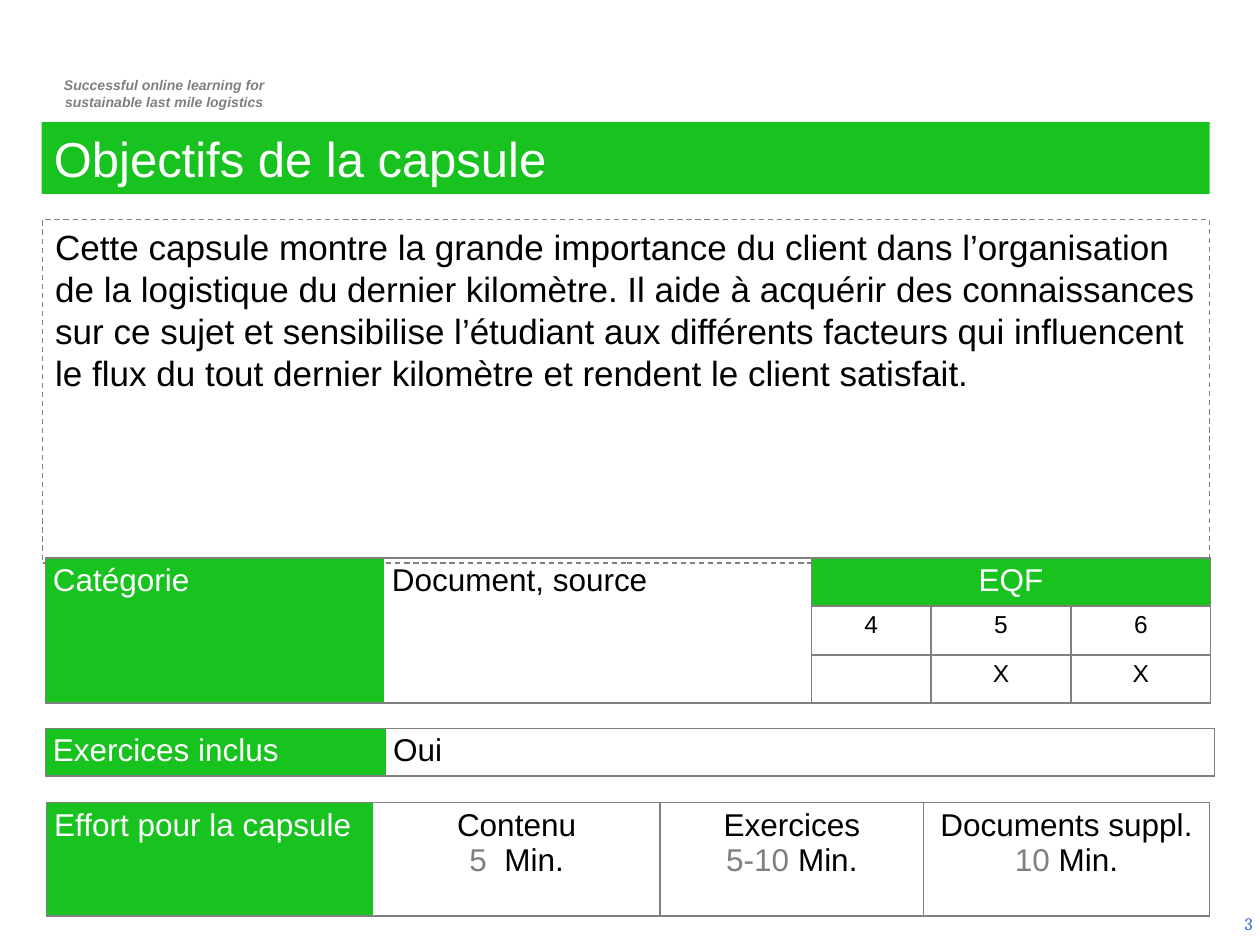
from lxml.etree import SubElement
from pptx import Presentation
from pptx.dml.color import RGBColor
from pptx.enum.dml import MSO_LINE
from pptx.enum.shapes import MSO_SHAPE
from pptx.enum.text import MSO_ANCHOR, PP_ALIGN
from pptx.oxml.ns import qn
from pptx.util import Inches, Pt

GREEN, GREY, BLACK, WHITE, BLUE = "18C320", "808080", "000000", "FFFFFF", "3366CC"
TAGLINE_GREY = "7F7F7F"
LEFT, CENTER, RIGHT = PP_ALIGN.LEFT, PP_ALIGN.CENTER, PP_ALIGN.RIGHT

TAGLINE = ["Successful online learning for", "sustainable last mile logistics"]
TITLE = "Objectifs de la capsule"
SUMMARY = (
    "Cette capsule montre la grande importance du client dans l’organisation "
    "de la logistique du dernier kilomètre. Il aide à acquérir des connaissances "
    "sur ce sujet et sensibilise l’étudiant aux différents facteurs qui influencent "
    "le flux du tout dernier kilomètre et rendent le client satisfait."
)
PAGE_NUMBER = "3"

# A cell is (lines, format); a line is a string or a list of (string, colour).
LABEL = dict(color=WHITE, fill=GREEN)
LEVEL = dict(size=14, align=CENTER)
CENTERED = dict(align=CENTER)


def duration(heading, minutes):
    return [heading, [(minutes, TAGLINE_GREY), (" Min.", BLACK)]], CENTERED


TABLES = [
    dict(
        left=0.36, top=4.43, widths=[2.69, 3.39, 0.95, 1.11, 1.11], heights=[0.37, 0.39, 0.37],
        merges=[(0, 0, 2, 0), (0, 1, 2, 1), (0, 2, 0, 4)],
        cells={
            (0, 0): (["Catégorie"], LABEL),
            (0, 1): (["Document, source"], {}),
            (0, 2): (["EQF"], LABEL | CENTERED),
            (1, 2): (["4"], LEVEL), (1, 3): (["5"], LEVEL), (1, 4): (["6"], LEVEL),
            (2, 3): (["X"], LEVEL), (2, 4): (["X"], LEVEL),
        },
    ),
    dict(
        left=0.36, top=5.78, widths=[2.7, 6.58], heights=[0.37], merges=[],
        cells={(0, 0): (["Exercices inclus"], LABEL), (0, 1): (["Oui"], {})},
    ),
    dict(
        left=0.37, top=6.37, widths=[2.59, 2.28, 2.09, 2.27], heights=[0.9], merges=[],
        cells={
            (0, 0): (["Effort pour la capsule"], LABEL),
            (0, 1): duration("Contenu", "5 "),
            (0, 2): duration("Exercices", "5-10"),
            (0, 3): duration("Documents suppl.", "10"),
        },
    ),
]


def rgb(color):
    return RGBColor.from_string(color)


def write(frame, lines, size=18, color=BLACK, font="Arial", align=LEFT, bold=False, italic=False):
    for index, line in enumerate(lines):
        para = frame.add_paragraph() if index else frame.paragraphs[0]
        para.alignment = align
        for text, tint in [(line, color)] if isinstance(line, str) else line:
            span = para.add_run()
            span.text = text
            span.font.name, span.font.size = font, Pt(size)
            span.font.bold, span.font.italic = bold, italic
            span.font.color.rgb = rgb(tint)


def add_text(page, at, lines, anchor=MSO_ANCHOR.TOP, **style):
    box = page.shapes.add_textbox(*map(Inches, at))
    box.text_frame.word_wrap = True
    box.text_frame.vertical_anchor = anchor
    write(box.text_frame, lines, **style)


def add_panel(page, at, text, fill=None, dashed=False, **style):
    panel = page.shapes.add_shape(MSO_SHAPE.RECTANGLE, *map(Inches, at))
    panel.shadow.inherit = False
    if fill:
        panel.fill.solid()
        panel.fill.fore_color.rgb = rgb(fill)
    else:
        panel.fill.background()
    if dashed:
        panel.line.color.rgb = rgb(GREY)
        panel.line.width = Pt(0.75)
        panel.line.dash_style = MSO_LINE.DASH
    else:
        panel.line.fill.background()
    panel.text_frame.word_wrap = True
    panel.text_frame.vertical_anchor = MSO_ANCHOR.TOP
    write(panel.text_frame, [text], **style)


def set_borders(cell, hidden):
    """Draw grey cell edges, except the hidden one."""
    properties = cell._tc.get_or_add_tcPr()
    for position, edge in enumerate(("lnL", "lnR", "lnT", "lnB")):
        line = SubElement(properties, qn(f"a:{edge}"), w=str(Pt(1)))
        if edge == hidden:
            SubElement(line, qn("a:noFill"))
        else:
            SubElement(SubElement(line, qn("a:solidFill")), qn("a:srgbClr"), val=GREY)
        properties.insert(position, line)


def add_grid(page, left, top, widths, heights, merges, cells):
    frame = page.shapes.add_table(
        len(heights), len(widths),
        *map(Inches, (left, top, sum(widths), sum(heights))),
    )
    table = frame.table
    table.first_row = table.horz_banding = False
    for column, width in zip(table.columns, widths):
        column.width = Inches(width)
    for row, height in zip(table.rows, heights):
        row.height = Inches(height)
    for first_row, first_column, last_row, last_column in merges:
        table.cell(first_row, first_column).merge(table.cell(last_row, last_column))

    for row in range(len(heights)):
        for column in range(len(widths)):
            cell = table.cell(row, column)
            lines, style = cells.get((row, column), ([], {}))
            style = dict(style)
            fill = style.pop("fill", None)
            if fill:
                cell.fill.solid()
                cell.fill.fore_color.rgb = rgb(fill)
            else:
                cell.fill.background()
            cell.margin_left = cell.margin_right = Inches(0.06)
            cell.margin_top = cell.margin_bottom = Inches(0.04)
            # The green label column meets its neighbour without a rule.
            set_borders(cell, {0: "lnR", 1: "lnL"}.get(column))
            write(cell.text_frame, lines, **style)


def main():
    deck = Presentation()
    deck.slide_width, deck.slide_height = Inches(10), Inches(7.5)
    page = deck.slides.add_slide(deck.slide_layouts[6])

    add_text(page, (0.29, 0.56, 2.03, 0.37), TAGLINE, size=8, color=TAGLINE_GREY,
             align=CENTER, bold=True, italic=True)
    add_text(page, (7.71, 7.13, 2.33, 0.4), [PAGE_NUMBER], anchor=MSO_ANCHOR.MIDDLE,
             size=10, color=BLUE, font="Cambria", align=RIGHT)
    add_panel(page, (0.33, 0.97, 9.27, 0.57), TITLE, fill=GREEN, size=28, color=WHITE)
    add_panel(page, (0.34, 1.74, 9.26, 2.73), SUMMARY, dashed=True, size=20)
    for grid in TABLES:
        add_grid(page, **grid)

    deck.save("out.pptx")


if __name__ == "__main__":
    main()
